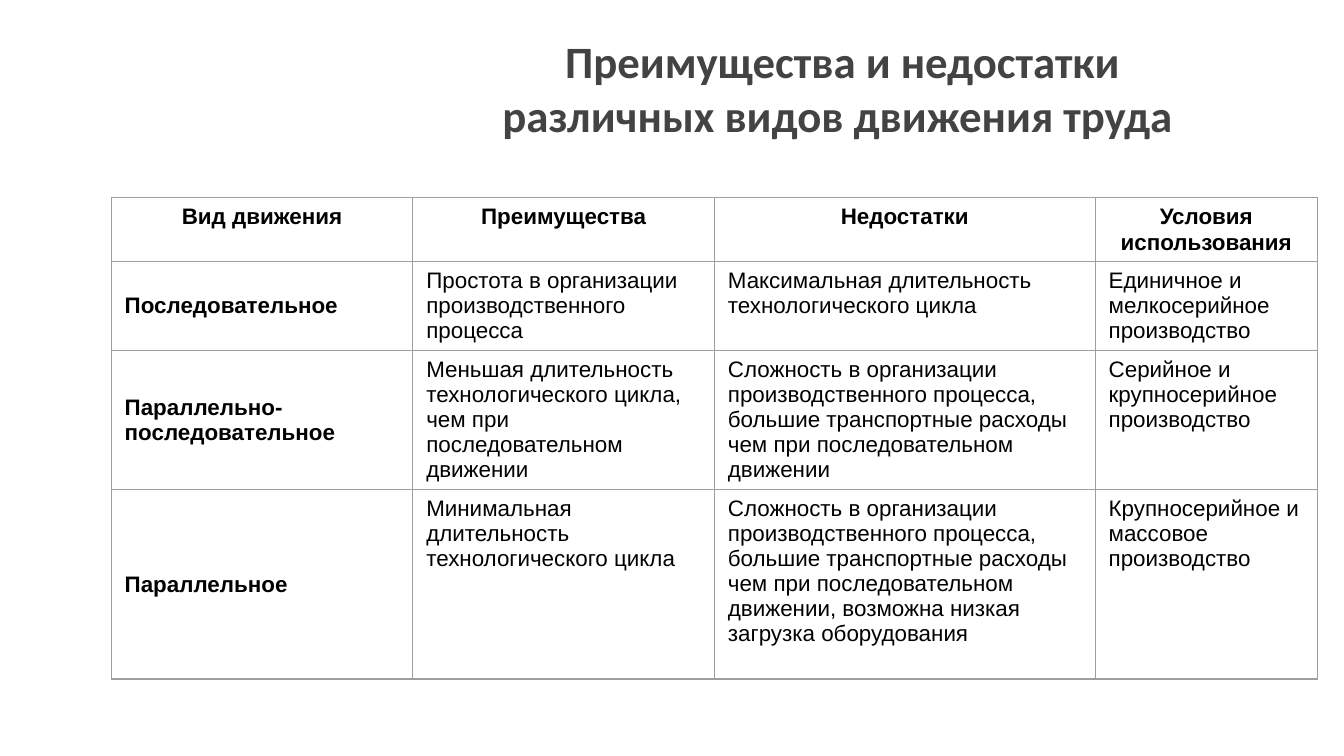
from dataclasses import dataclass

from lxml.etree import SubElement
from pptx import Presentation
from pptx.dml.color import RGBColor
from pptx.enum.text import MSO_ANCHOR as Anchor, MSO_AUTO_SIZE as AutoSize, PP_ALIGN as Align
from pptx.oxml.ns import qn
from pptx.util import Pt


@dataclass(frozen=True)
class Theme:
    title_font: str = "Calibri"
    table_font: str = "Arial"
    title_size: float = 24
    table_size: float = 12
    title_color: str = "434343"
    text_color: str = "000000"
    background: str = "FFFFFF"
    border_color: str = "9E9E9E"
    border_width: float = 0.75


@dataclass(frozen=True)
class Movement:
    kind: str
    advantages: str
    drawbacks: str
    conditions: str

    def texts(self) -> tuple[str, ...]:
        return self.kind, self.advantages, self.drawbacks, self.conditions


THEME = Theme()
TITLE = " Преимущества и недостатки различных видов движения труда"
HEADINGS = Movement("Вид движения", "Преимущества", "Недостатки", "Условия использования")
COMPLEXITY = (
    "Сложность в организации производственного процесса, "
    "большие транспортные расходы чем при последовательном движении"
)
MOVEMENTS = [
    Movement(
        "Последовательное",
        "Простота в организации производственного процесса",
        "Максимальная длительность технологического цикла",
        "Единичное и мелкосерийное производство",
    ),
    Movement(
        "Параллельно-последовательное",
        "Меньшая длительность технологического цикла, чем при последовательном движении",
        COMPLEXITY,
        "Серийное и крупносерийное производство",
    ),
    Movement(
        "Параллельное",
        "Минимальная длительность технологического цикла",
        COMPLEXITY + ", возможна низкая загрузка оборудования",
        "Крупносерийное и массовое производство",
    ),
]
COLUMN_WIDTHS = (161.6, 161.6, 204, 119)
ROW_HEIGHTS = (34.2, 47.4, 74.5, 101.6)


def write(frame, text: str, font: str, size: float, color: str, bold: bool, align: Align) -> None:
    paragraph = frame.paragraphs[0]
    paragraph.alignment = align
    run = paragraph.add_run()
    run.text = text
    run.font.name = font
    run.font.size = Pt(size)
    run.font.bold = bold
    run.font.color.rgb = RGBColor.from_string(color)


def add_title(slide) -> None:
    title = slide.shapes.title
    title.left, title.top, title.width, title.height = Pt(243.4), Pt(10), Pt(410.4), Pt(74.2)
    frame = title.text_frame
    frame.word_wrap = True
    frame.auto_size = AutoSize.NONE
    frame.vertical_anchor = Anchor.MIDDLE
    frame.margin_left = frame.margin_right = frame.margin_top = frame.margin_bottom = Pt(7.2)
    write(frame, TITLE, THEME.title_font, THEME.title_size, THEME.title_color, True, Align.CENTER)


def add_borders(cell) -> None:
    """Outline all four sides; border elements must precede the cell's fill."""
    properties = cell._tc.get_or_add_tcPr()
    for side in ("a:lnL", "a:lnR", "a:lnT", "a:lnB"):
        line = SubElement(properties, qn(side), w=str(Pt(THEME.border_width)))
        fill = SubElement(line, qn("a:solidFill"))
        SubElement(fill, qn("a:srgbClr"), val=THEME.border_color)


def format_cell(cell, text: str, is_heading: bool, is_kind: bool) -> None:
    add_borders(cell)
    cell.fill.background()
    cell.margin_left = cell.margin_right = Pt(7.2)
    cell.margin_top = cell.margin_bottom = Pt(3.6)
    cell.vertical_anchor = Anchor.MIDDLE if is_kind and not is_heading else Anchor.TOP
    write(cell.text_frame, text, THEME.table_font, THEME.table_size, THEME.text_color,
          is_heading or is_kind, Align.CENTER if is_heading else Align.LEFT)


def add_comparison(slide) -> None:
    comparison = slide.shapes.add_table(
        len(ROW_HEIGHTS), len(COLUMN_WIDTHS), Pt(59.6), Pt(106),
        Pt(sum(COLUMN_WIDTHS)), Pt(sum(ROW_HEIGHTS)),
    ).table
    comparison.first_row = comparison.horz_banding = False
    for column, width in zip(comparison.columns, COLUMN_WIDTHS):
        column.width = Pt(width)
    for row, height in zip(comparison.rows, ROW_HEIGHTS):
        row.height = Pt(height)
    for row_index, movement in enumerate([HEADINGS, *MOVEMENTS]):
        for column_index, text in enumerate(movement.texts()):
            format_cell(comparison.cell(row_index, column_index), text,
                        row_index == 0, column_index == 0)


def main() -> None:
    deck = Presentation()
    deck.slide_width, deck.slide_height = Pt(720), Pt(405)
    slide = deck.slides.add_slide(deck.slide_layouts[5])
    slide.background.fill.solid()
    slide.background.fill.fore_color.rgb = RGBColor.from_string(THEME.background)
    add_title(slide)
    add_comparison(slide)
    deck.save("out.pptx")


if __name__ == "__main__":
    main()
